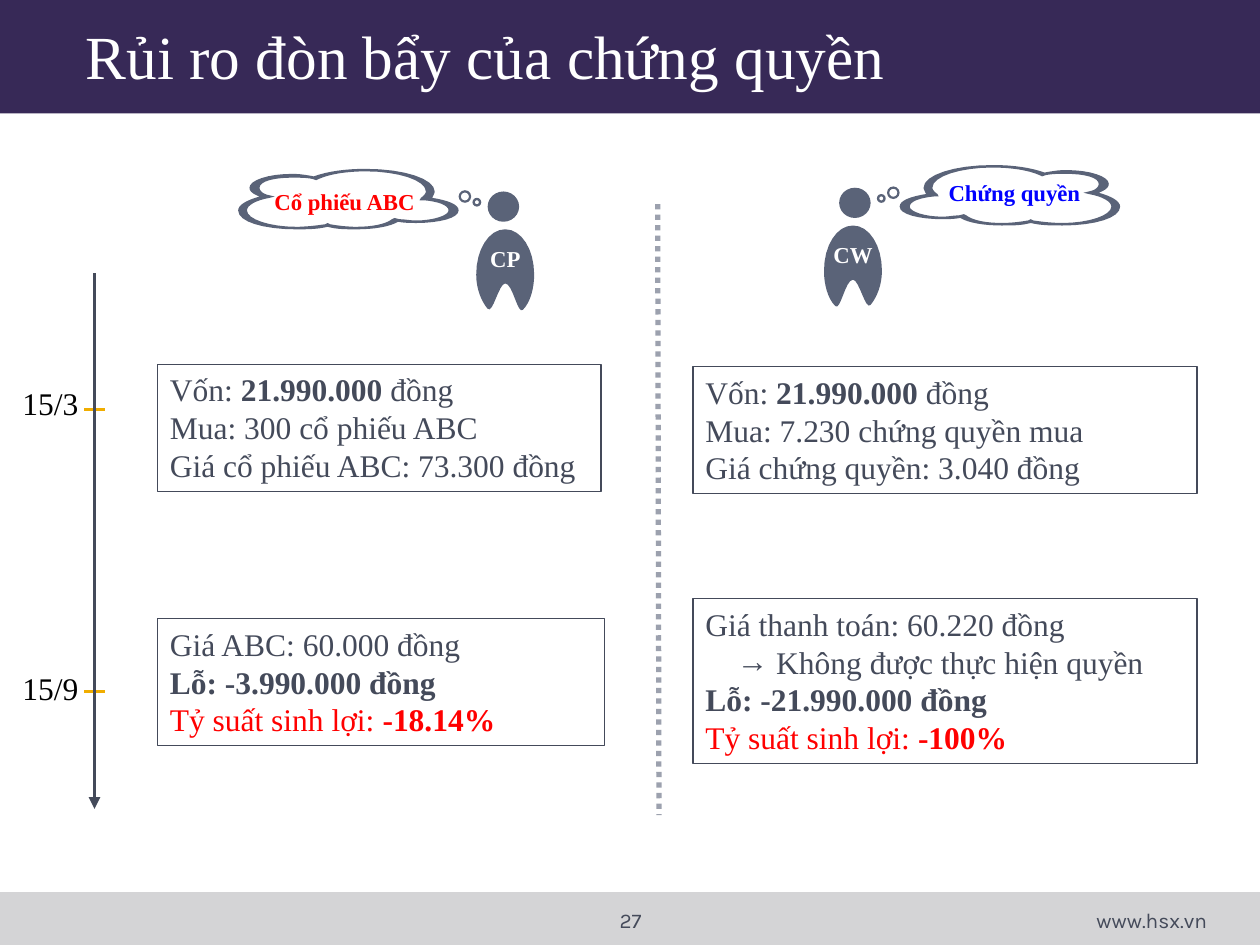
import pptx
import pptx.dml.color
import pptx.enum.dml
import pptx.enum.shapes
import pptx.enum.text
import pptx.oxml.ns
import pptx.util
from lxml import etree

Inches = pptx.util.Inches
SHAPE = pptx.enum.shapes.MSO_SHAPE
ALIGN = pptx.enum.text.PP_ALIGN
ANCHOR = pptx.enum.text.MSO_ANCHOR
AUTOSIZE = pptx.enum.text.MSO_AUTO_SIZE
qn = pptx.oxml.ns.qn

SERIF, SANS = "Times New Roman", "Karla"
SLATE, DARK, RED, WHITE = "5A6378", "444A5A", "FF0000", "FFFFFF"
MIRROR_SUM, MIRROR_DROP = 10.78, 0.03

BODY = [[(6.54, 2.15), (6.54, 2.26, 6.57, 2.37, 6.63, 2.43), (6.67, 2.47, 6.71, 2.22, 6.77, 2.22),
         (6.82, 2.22, 6.87, 2.47, 6.91, 2.42), (6.96, 2.36, 7, 2.26, 7, 2.15),
         (7, 1.95, 6.9, 1.79, 6.77, 1.79), (6.64, 1.79, 6.54, 1.95, 6.54, 2.15)]]
CLOUD = [
    [(8.43, 1.79), (8.34, 1.79, 8.26, 1.79, 8.18, 1.77), (8.11, 1.79, 8.04, 1.79, 7.95, 1.79),
     (7.81, 1.79, 7.69, 1.77, 7.62, 1.73), (7.57, 1.74, 7.52, 1.74, 7.48, 1.74),
     (7.29, 1.74, 7.14, 1.7, 7.14, 1.64), (7.14, 1.59, 7.23, 1.56, 7.35, 1.54),
     (7.34, 1.52, 7.33, 1.5, 7.33, 1.49), (7.33, 1.39, 7.57, 1.31, 7.88, 1.31),
     (8.04, 1.31, 8.18, 1.33, 8.29, 1.37), (8.34, 1.36, 8.4, 1.35, 8.46, 1.35),
     (8.65, 1.35, 8.8, 1.4, 8.8, 1.46), (8.8, 1.49, 8.77, 1.51, 8.72, 1.53),
     (8.83, 1.56, 8.89, 1.6, 8.89, 1.64), (8.89, 1.73, 8.69, 1.79, 8.43, 1.79)],
    [(8.18, 1.74), (8.2, 1.75), (8.27, 1.76, 8.35, 1.77, 8.43, 1.77),
     (8.64, 1.77, 8.82, 1.71, 8.82, 1.64), (8.82, 1.6, 8.75, 1.56, 8.64, 1.54), (8.6, 1.53),
     (8.64, 1.52), (8.7, 1.51, 8.72, 1.48, 8.72, 1.46), (8.72, 1.41, 8.61, 1.38, 8.46, 1.38),
     (8.41, 1.38, 8.35, 1.38, 8.3, 1.39), (8.27, 1.4), (8.25, 1.39),
     (8.16, 1.35, 8.02, 1.33, 7.88, 1.33), (7.62, 1.33, 7.4, 1.4, 7.4, 1.49),
     (7.4, 1.5, 7.41, 1.52, 7.44, 1.54), (7.45, 1.56), (7.41, 1.56),
     (7.3, 1.57, 7.22, 1.6, 7.22, 1.64), (7.22, 1.68, 7.34, 1.72, 7.48, 1.72),
     (7.52, 1.72, 7.57, 1.71, 7.61, 1.71), (7.65, 1.7), (7.67, 1.71),
     (7.72, 1.75, 7.83, 1.77, 7.95, 1.77), (8.03, 1.77, 8.1, 1.76, 8.16, 1.75)],
]


def rgb(color):
    """Return the colour for a hex string."""
    return pptx.dml.color.RGBColor.from_string(color)


def fill_plain(sp, color):
    """Give a shape a flat fill without outline or shadow."""
    sp.shadow.inherit = False
    sp.fill.solid()
    sp.fill.fore_color.rgb = rgb(color)
    sp.line.fill.background()
    return sp


def add_solid(shapes, kind, left, top, width, height, color):
    """Add a filled preset shape."""
    sp = shapes.add_shape(kind, Inches(left), Inches(top), Inches(width), Inches(height))
    return fill_plain(sp, color)


def format_run(r, size, color, bold=False, font=SERIF):
    """Set the font of a run."""
    r.font.name, r.font.size, r.font.bold = font, pptx.util.Pt(size), bold
    r.font.color.rgb = rgb(color)


def add_label(shapes, text, box, size, color, bold=False, font=SERIF, align=ALIGN.LEFT, inset=None):
    """Add a one-line text box."""
    tf = shapes.add_textbox(*map(Inches, box)).text_frame
    tf.word_wrap = True
    if inset is not None:
        tf.margin_left = tf.margin_right = tf.margin_top = tf.margin_bottom = Inches(inset)
    tf.text = text
    tf.paragraphs[0].alignment = align
    format_run(tf.paragraphs[0].runs[0], size, color, bold, font)


def set_bullet(p, char, indent):
    """Make a paragraph an indented second-level bullet."""
    p.level = 1
    pPr = p._p.get_or_add_pPr()
    pPr.set("marL", str(Inches(2 * indent)))
    pPr.set("indent", str(-Inches(indent)))
    etree.SubElement(pPr, qn("a:buFont")).set("typeface", SERIF)
    etree.SubElement(pPr, qn("a:buChar")).set("char", char)


def add_facts(s, box, lines):
    """Add an outlined box of lines, each a list of (text, bold, colour) runs."""
    sp = s.shapes.add_shape(SHAPE.RECTANGLE, *map(Inches, box))
    sp.shadow.inherit = False
    sp.fill.background()
    sp.line.color.rgb, sp.line.width = rgb(DARK), pptx.util.Pt(0.75)
    tf = sp.text_frame
    tf.word_wrap, tf.vertical_anchor = True, ANCHOR.TOP
    tf.auto_size = AUTOSIZE.SHAPE_TO_FIT_TEXT
    for i, line in enumerate(lines):
        p = tf.add_paragraph() if i else tf.paragraphs[0]
        p.alignment = ALIGN.LEFT
        if line[0][0].startswith("→"):
            set_bullet(p, "→", 0.25)
        for text, bold, color in line:
            r = p.add_run()
            r.text = text.lstrip("→")
            format_run(r, 18, color, bold)


def add_line(s, start, end, color, width):
    """Add a straight connector without shadow."""
    ln = s.shapes.add_connector(pptx.enum.shapes.MSO_CONNECTOR.STRAIGHT, *map(Inches, start + end))
    ln.line.color.rgb, ln.line.width = rgb(color), pptx.util.Pt(width)
    etree.SubElement(ln._element.spPr, qn("a:effectLst"))
    return ln


def flatten(contour, steps=8):
    """Turn a contour of points and Bezier segments into points."""
    points = [contour[0]]
    for seg in contour[1:]:
        if len(seg) == 2:
            points.append(seg)
            continue
        ctrl = [points[-1], seg[:2], seg[2:4], seg[4:]]
        for t in (i / steps for i in range(1, steps + 1)):
            weights = ((1 - t) ** 3, 3 * t * (1 - t) ** 2, 3 * t * t * (1 - t), t ** 3)
            points.append(tuple(sum(w * c[axis] for w, c in zip(weights, ctrl)) for axis in (0, 1)))
    return points


def add_outline(shapes, contours, mirrored):
    """Add a filled freeform, mirrored to the left half if asked."""
    builder = None
    for contour in contours:
        points = [(Inches(MIRROR_SUM - x), Inches(y + MIRROR_DROP)) if mirrored
                  else (Inches(x), Inches(y)) for x, y in flatten(contour)]
        if builder is None:
            builder = shapes.build_freeform(*points[0], scale=1.0)
        else:
            builder.move_to(*points[0])
        builder.add_line_segments(points[1:], close=True)
    fill_plain(builder.convert_to_shape(), SLATE)


def add_person(s, label, mirrored):
    """Add a figure with a thought cloud."""
    shapes = s.shapes.add_group_shape().shapes

    def place(left, top, width, height):
        """Return the box on the side of this figure."""
        if mirrored:
            return MIRROR_SUM - left - width, top + MIRROR_DROP, width, height
        return left, top, width, height

    add_outline(shapes, BODY, mirrored)
    add_solid(shapes, SHAPE.OVAL, *place(6.66, 1.49, 0.25, 0.24), SLATE)
    add_label(shapes, label, place(6.54, 1.88, 0.46, 0.28), 13, WHITE, True,
              align=ALIGN.CENTER, inset=0.03)
    add_outline(shapes, CLOUD, mirrored)
    for box, ring in (((7.04, 1.48, 0.1, 0.1), 0.18), ((6.96, 1.54, 0.07, 0.07), 0.27)):
        add_solid(shapes, SHAPE.DONUT, *place(*box), SLATE).adjustments[0] = ring


def add_title(s, text):
    """Fill the title placeholder over the header and footer bands."""
    title = s.shapes.title
    for top, height, color in ((0, 0.9, "372957"), (7.08, 0.42, "D4D4D6")):
        band = add_solid(s.shapes, SHAPE.RECTANGLE, 0, top, 10, height, color)
        title.element.addprevious(band.element)
    title.left, title.top, title.width, title.height = map(Inches, (0.58, 0.13, 9, 0.62))
    tf = title.text_frame
    tf.text = text
    tf.auto_size, tf.vertical_anchor = AUTOSIZE.NONE, ANCHOR.MIDDLE
    tf.paragraphs[0].alignment = ALIGN.JUSTIFY
    format_run(tf.paragraphs[0].runs[0], 35, WHITE)


def main():
    """Build the slide and save it."""
    prs = pptx.Presentation()
    prs.slide_width, prs.slide_height = Inches(10), Inches(7.5)
    s = prs.slides.add_slide(prs.slide_layouts[5])
    add_title(s, "Rủi ro đòn bẩy của chứng quyền")

    divider = add_line(s, (5.22, 1.62), (5.23, 6.47), SLATE, 3)
    divider.line.dash_style = pptx.enum.dml.MSO_LINE.ROUND_DOT
    color = divider.line._ln.find(".//" + qn("a:srgbClr"))
    etree.SubElement(color, qn("a:alpha")).set("val", "60000")

    add_person(s, "CW", False)
    add_person(s, "CP", True)
    add_label(s.shapes, "Cổ phiếu ABC", (2.08, 1.44, 1.48, 0.32), 13, RED, True)
    add_label(s.shapes, "Chứng quyền", (7.43, 1.37, 1.27, 0.32), 13, "0000FF", True)

    capital = [("Vốn: ", False, DARK), ("21.990.000 ", True, DARK), ("đồng", False, DARK)]
    yield_label = ("Tỷ suất sinh lợi: ", False, RED)
    add_facts(s, (1.25, 2.89, 3.52, 1.01), [
        capital, [("Mua: 300 cổ phiếu ABC", False, DARK)],
        [("Giá cổ phiếu ABC: 73.300 đồng", False, DARK)]])
    add_facts(s, (5.5, 2.91, 4, 1.01), [
        capital, [("Mua: 7.230 chứng quyền mua", False, DARK)],
        [("Giá chứng quyền: 3.040 đồng", False, DARK)]])
    add_facts(s, (1.25, 4.91, 3.55, 1.01), [
        [("Giá ABC: 60.000 đồng", False, DARK)], [("Lỗ: -3.990.000 đồng", True, DARK)],
        [yield_label, ("-18.14%", True, RED)]])
    add_facts(s, (5.5, 4.75, 4, 1.31), [
        [("Giá thanh toán: 60.220 đồng", False, DARK)],
        [("→ Không được thực hiện quyền", False, DARK)],
        [("Lỗ: -21.990.000 đồng", True, DARK)], [yield_label, ("-100%", True, RED)]])

    for date, y, top in (("15/3", 3.25, 3), ("15/9", 5.49, 5.26)):
        add_line(s, (0.67, y), (0.83, y), "F0AD00", 1.5)
        add_label(s.shapes, date, (0.08, top, 0.79, 0.4), 18, "000000")
    axis = add_line(s, (0.75, 2.17), (0.75, 6.42), DARK, 2.25)
    etree.SubElement(axis.line._ln, qn("a:tailEnd")).set("type", "triangle")

    add_label(s.shapes, "27", (4.17, 7.15, 1.67, 0.35), 12, DARK, font=SANS, align=ALIGN.CENTER)
    add_label(s.shapes, "www.hsx.vn", (7.35, 7.15, 2.33, 0.34), 12, DARK, font=SANS, align=ALIGN.RIGHT)
    prs.save("out.pptx")


if __name__ == "__main__":
    main()
